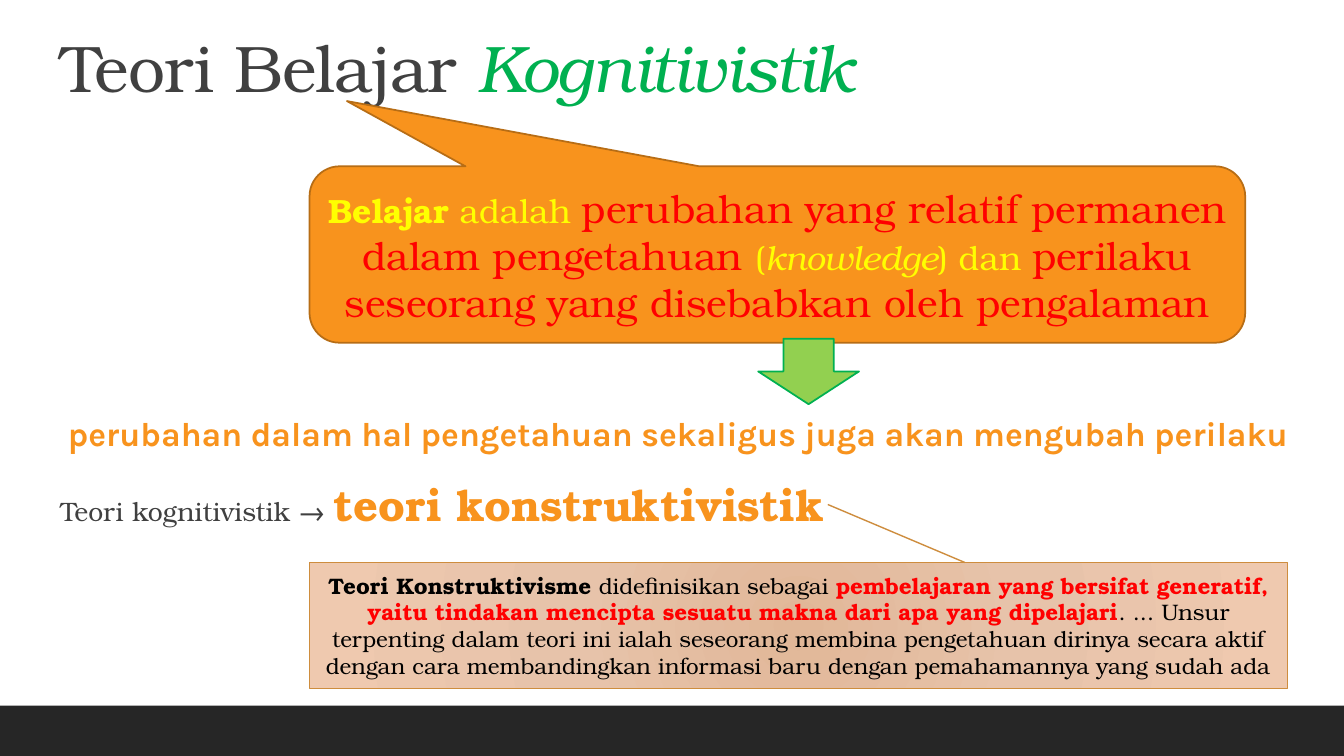
"""Build the slide on the cognitivist theory of learning."""
import dataclasses
import typing

import lxml.etree
import pptx
import pptx.dml.color
import pptx.enum.shapes
import pptx.enum.text
import pptx.oxml.ns
import pptx.shapes.autoshape
import pptx.slide
import pptx.text.text
import pptx.util

PX = 9144
KIND = pptx.enum.shapes.MSO_SHAPE
ALIGN = pptx.enum.text.PP_ALIGN
ANCHOR = pptx.enum.text.MSO_ANCHOR
qn = pptx.oxml.ns.qn


@dataclasses.dataclass(frozen=True)
class Theme:
    serif: str = "TeX Gyre Bonum"
    sans: str = "Karla"
    dark: str = "262626"
    gray: str = "404040"
    black: str = "000000"
    orange: str = "F8931D"
    brown: str = "B76D15"
    tan: str = "CE8D3E"
    green: str = "00B050"
    lime: str = "92D050"
    yellow: str = "FFFF00"
    red: str = "FF0000"
    blush: tuple[tuple[int, str], ...] = ((0, "E1B798"), (45, "E7C3AA"), (100, "EFC9AF"))
    title: int = 47
    key: int = 31
    large: int = 28
    mid: int = 24
    body: int = 19
    small: int = 16


THEME = Theme()


class Box(typing.NamedTuple):
    left: int
    top: int
    width: int
    height: int

    def emu(self) -> list[int]:
        return [side * PX for side in self]


@dataclasses.dataclass(frozen=True)
class Run:
    text: str
    size: int
    color: str
    bold: bool = False
    italic: bool = False
    font: str = THEME.serif


@dataclasses.dataclass(frozen=True)
class Form:
    kind: KIND
    box: Box
    fill: str | tuple[tuple[int, str], ...]
    line: str | None = None
    weight: float = 1.25
    adjust: tuple[float, ...] = ()
    runs: tuple[Run, ...] = ()


def rgb(code: str) -> pptx.dml.color.RGBColor:
    return pptx.dml.color.RGBColor.from_string(code)


def write(para: pptx.text.text._Paragraph, runs: tuple[Run, ...], *,
          align: ALIGN = ALIGN.LEFT, space: float = 1.0, before: int = 0,
          after: int = 0, hang: int = 0, track: int = 0) -> None:
    para.alignment = align
    para.line_spacing = space
    para.space_before = pptx.util.Pt(before)
    para.space_after = pptx.util.Pt(after)
    if hang:
        props = para._p.get_or_add_pPr()
        props.set("marL", str(hang * PX))
        props.set("indent", str(-hang * PX))
    for item in runs:
        run = para.add_run()
        run.text = item.text
        font = run.font
        font.name, font.size = item.font, pptx.util.Pt(item.size)
        font.bold, font.italic = item.bold, item.italic
        font.color.rgb = rgb(item.color)
        if track:
            run._r.get_or_add_rPr().set("spc", str(track))


def blend(shape: pptx.shapes.autoshape.Shape, stops: tuple[tuple[int, str], ...]) -> None:
    shape.fill.background()
    blank = shape._element.spPr.find(qn("a:noFill"))
    grad = lxml.etree.Element(qn("a:gradFill"), rotWithShape="1")
    group = lxml.etree.SubElement(grad, qn("a:gsLst"))
    for pos, code in stops:
        stop = lxml.etree.SubElement(group, qn("a:gs"), pos=str(pos * 1000))
        lxml.etree.SubElement(stop, qn("a:srgbClr"), val=code)
    ring = lxml.etree.SubElement(grad, qn("a:path"), path="circle")
    lxml.etree.SubElement(ring, qn("a:fillToRect"), dict.fromkeys("ltrb", "100000"))
    shape._element.spPr.replace(blank, grad)


def draw(slide: pptx.slide.Slide, form: Form) -> None:
    shape = slide.shapes.add_shape(form.kind, *form.box.emu())
    shape.shadow.inherit = False
    for spot, value in enumerate(form.adjust):
        shape.adjustments[spot] = value
    if isinstance(form.fill, str):
        shape.fill.solid()
        shape.fill.fore_color.rgb = rgb(form.fill)
    else:
        blend(shape, form.fill)
    if form.line:
        shape.line.color.rgb = rgb(form.line)
        shape.line.width = pptx.util.Pt(form.weight)
    else:
        shape.line.fill.background()
    if form.runs:
        frame = shape.text_frame
        frame.word_wrap = True
        frame.vertical_anchor = ANCHOR.MIDDLE
        write(frame.paragraphs[0], form.runs, align=ALIGN.CENTER)


def frame(slide: pptx.slide.Slide, box: Box) -> pptx.text.text.TextFrame:
    area = slide.shapes.add_textbox(*box.emu()).text_frame
    area.word_wrap = True
    return area


BAR = Form(KIND.RECTANGLE, Box(0, 700, 1333, 50), THEME.dark)
TITLE = (Run("Teori Belajar ", THEME.title, THEME.gray),
         Run("Kognitivistik", THEME.title, THEME.green, italic=True))
CHANGE = (Run("perubahan dalam hal pengetahuan sekaligus juga akan mengubah perilaku",
              THEME.mid, THEME.orange, bold=True, font=THEME.sans),)
THEORY = (Run("Teori kognitivistik → ", THEME.body, THEME.gray),
          Run("teori konstruktivistik", THEME.key, THEME.orange, bold=True))
FORMS = (
    Form(KIND.ROUNDED_RECTANGULAR_CALLOUT, Box(307, 165, 928, 175), THEME.orange,
         THEME.brown, adjust=(-0.46, -0.87, 0.17), runs=(
             Run("Belajar", THEME.mid, THEME.yellow, bold=True),
             Run(" adalah ", THEME.mid, THEME.yellow),
             Run("perubahan yang relatif permanen dalam pengetahuan ",
                 THEME.large, THEME.red),
             Run("(", THEME.mid, THEME.yellow),
             Run("knowledge", THEME.mid, THEME.yellow, italic=True),
             Run(") dan ", THEME.mid, THEME.yellow),
             Run("perilaku seseorang yang disebabkan oleh pengalaman",
                 THEME.large, THEME.red))),
    Form(KIND.DOWN_ARROW, Box(752, 336, 100, 65), THEME.lime, THEME.green),
    Form(KIND.LINE_CALLOUT_1, Box(307, 558, 970, 125), THEME.blush, THEME.tan, 1,
         (0, 0.67, -0.46, 0.53), (
             Run("Teori Konstruktivisme", THEME.small, THEME.black, bold=True),
             Run(" didefinisikan sebagai ", THEME.small, THEME.black),
             Run("pembelajaran yang bersifat generatif, yaitu tindakan mencipta "
                 "sesuatu makna dari apa yang dipelajari",
                 THEME.small, THEME.red, bold=True),
             Run(". ... Unsur terpenting dalam teori ini ialah seseorang membina "
                 "pengetahuan dirinya secara aktif dengan cara membandingkan "
                 "informasi baru dengan pemahamannya yang sudah ada",
                 THEME.small, THEME.black))),
)


def main() -> None:
    deck = pptx.Presentation()
    deck.slide_width, deck.slide_height = 1333 * PX, 750 * PX
    slide = deck.slides.add_slide(deck.slide_layouts[6])
    draw(slide, BAR)
    body = frame(slide, Box(50, 401, 1237, 256))
    flow = {"space": 1.1, "before": 12, "after": 2, "hang": 10}
    write(body.paragraphs[0], CHANGE, align=ALIGN.RIGHT, **flow)
    write(body.add_paragraph(), THEORY, **flow)
    head = frame(slide, Box(50, 30, 900, 125))
    write(head.paragraphs[0], TITLE, space=0.9, track=-50)
    for form in FORMS:
        draw(slide, form)
    deck.save("out.pptx")


if __name__ == "__main__":
    main()
